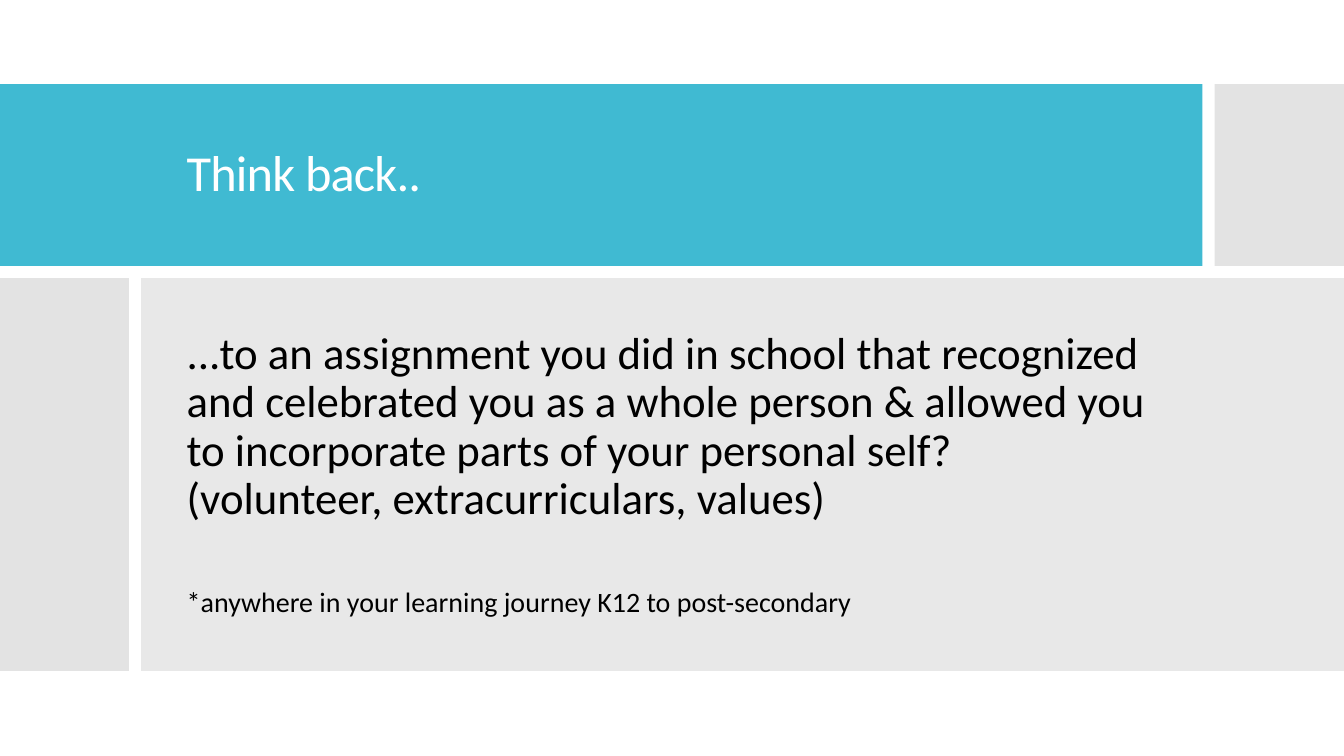
from lxml import etree
from pptx import Presentation
from pptx.dml.color import RGBColor
from pptx.enum import shapes, text
from pptx.oxml.ns import qn
from pptx.util import Cm, Pt

TEAL = RGBColor(0x40, 0xBA, 0xD2)
SIDE_GRAY = RGBColor(0xC8, 0xC8, 0xC8)
BODY_GRAY = RGBColor(0xD9, 0xD9, 0xD9)
WHITE = RGBColor(0xFF, 0xFF, 0xFF)
BLACK = RGBColor(0x00, 0x00, 0x00)

FONT = "Calibri"
SLIDE_WIDTH, SLIDE_HEIGHT = Cm(33.87), Cm(19.05)
GAP = Cm(0.31)
TEXT_LEFT, TEXT_WIDTH = Cm(4.45), Cm(24.95)

TITLE = "Think back.."
QUESTION = (
    "...to an assignment you did in school that recognized and celebrated you "
    "as a whole person & allowed you to incorporate parts of your personal self? "
    "(volunteer, extracurriculars, values)"
)
FOOTNOTE = "*anywhere in your learning journey K12 to post-secondary"


def add_panel(slide, left, top, width, height, color, opacity=100):
    panel = slide.shapes.add_shape(
        shapes.MSO_SHAPE.RECTANGLE, left, top, width, height)
    panel.shadow.inherit = False
    panel.line.fill.background()
    panel.fill.solid()
    panel.fill.fore_color.rgb = color
    if opacity < 100:
        color_element = panel.fill._xPr.find(qn("a:solidFill"))[0]
        alpha = etree.SubElement(color_element, qn("a:alpha"))
        alpha.set("val", str(opacity * 1000))
    slide.shapes._spTree.insert(2, panel._element)


def place_text(placeholder, top, height):
    placeholder.left, placeholder.top = TEXT_LEFT, top
    placeholder.width, placeholder.height = TEXT_WIDTH, height
    frame = placeholder.text_frame
    frame.word_wrap = True
    frame.auto_size = text.MSO_AUTO_SIZE.NONE
    frame.vertical_anchor = text.MSO_ANCHOR.MIDDLE
    return frame


def format_paragraph(paragraph, size, color, space_before):
    paragraph.alignment = text.PP_ALIGN.LEFT
    paragraph.line_spacing = 0.9
    paragraph.space_before = Pt(space_before)
    for run in paragraph.runs:
        run.font.name = FONT
        run.font.size = Pt(size)
        run.font.color.rgb = color


def build_header(slide, top, height):
    banner_width = Cm(30.3)
    side_left = banner_width + GAP
    add_panel(slide, 0, top, banner_width, height, TEAL)
    add_panel(slide, side_left, top, SLIDE_WIDTH - side_left, height, SIDE_GRAY, 50)

    margin = Cm(0.92)
    frame = place_text(slide.shapes.title, top + margin, height - 2 * margin)
    frame.text = TITLE
    paragraph = frame.paragraphs[0]
    format_paragraph(paragraph, 36, WHITE, 0)
    paragraph.runs[0].font._element.set("spc", "-60")


def build_body(slide, top, height):
    side_width = Cm(3.25)
    body_left = side_width + GAP
    add_panel(slide, 0, top, side_width, height, SIDE_GRAY, 50)
    add_panel(slide, body_left, top, SLIDE_WIDTH - body_left, height, BODY_GRAY, 60)

    frame = place_text(slide.placeholders[1], top, height)
    frame.text = QUESTION
    frame.add_paragraph().text = FOOTNOTE
    for paragraph, size, space_before in zip(frame.paragraphs, (32, 20), (12, 46)):
        format_paragraph(paragraph, size, BLACK, space_before)
        properties = paragraph._p.get_or_add_pPr()
        properties.set("marL", "0")
        properties.set("indent", "0")
        etree.SubElement(properties, qn("a:buNone"))


def main():
    presentation = Presentation()
    presentation.slide_width = SLIDE_WIDTH
    presentation.slide_height = SLIDE_HEIGHT
    slide = presentation.slides.add_slide(presentation.slide_layouts[1])
    header_top, header_height = Cm(2.12), Cm(4.58)
    build_header(slide, header_top, header_height)
    build_body(slide, header_top + header_height + GAP, Cm(9.9))
    presentation.save("out.pptx")


if __name__ == "__main__":
    main()
